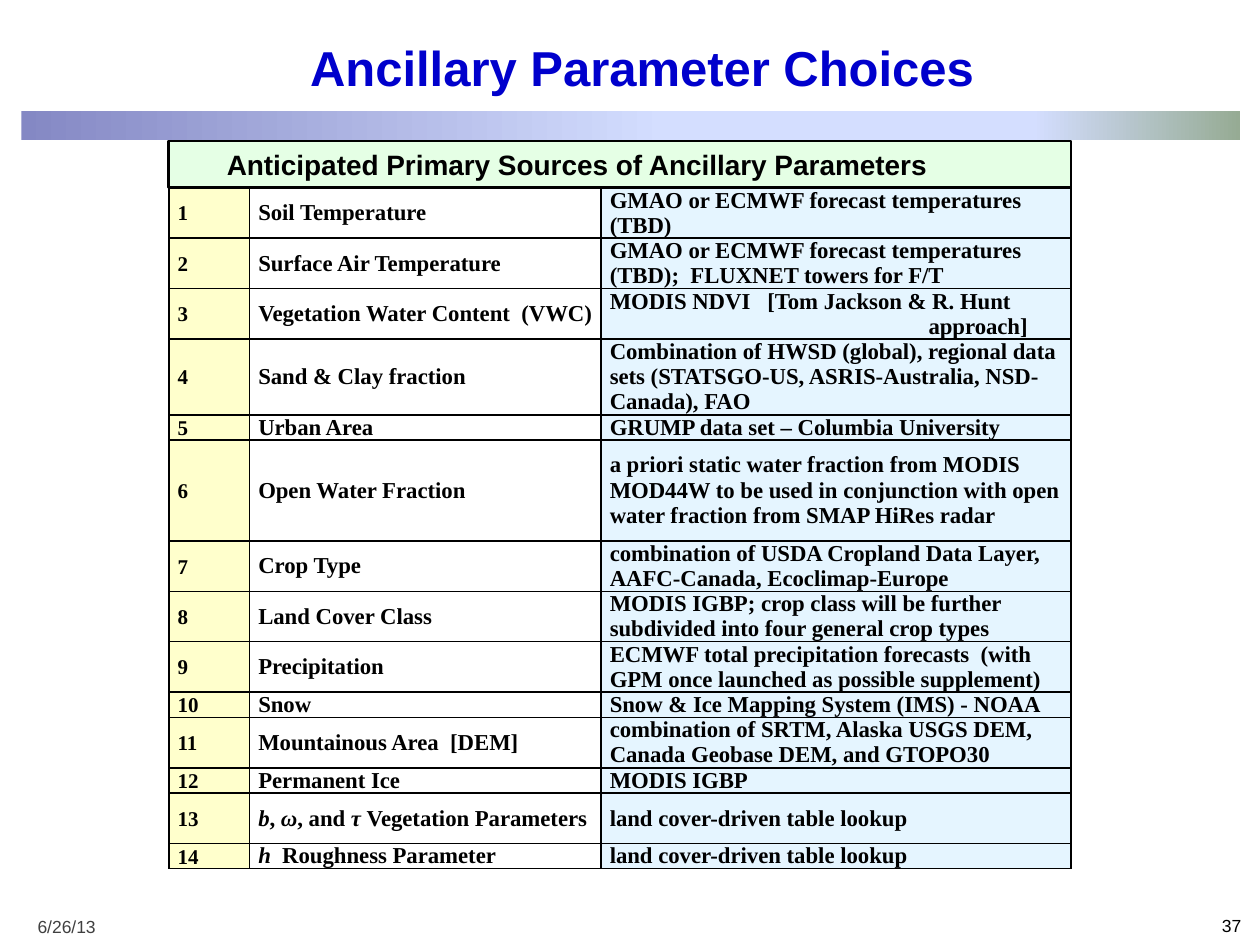
from lxml.etree import SubElement
from pptx import Presentation
from pptx.dml.color import RGBColor
from pptx.enum.shapes import MSO_SHAPE
from pptx.enum.text import MSO_ANCHOR, PP_ALIGN
from pptx.oxml.ns import qn
from pptx.util import Inches, Pt

LEFT, WIDTH = 1.34, 7.16
COLUMN_WIDTHS = [0.64, 2.79, 3.73]
COLUMN_FILLS = [("FFFFCC", 100), None, ("CCECFF", 50)]
COLUMN_SIZES = [12, 13, 13]
LINE_HEIGHT = 0.2
SOURCES = [
    (2, "Soil Temperature", "GMAO or ECMWF forecast temperatures (TBD)"),
    (2, "Surface Air Temperature",
     "GMAO or ECMWF forecast temperatures (TBD);  FLUXNET towers for F/T"),
    (2, "Vegetation Water Content  (VWC)",
     "MODIS NDVI\t[Tom Jackson & R. Hunt\napproach]"),
    (3, "Sand & Clay fraction",
     "Combination of HWSD (global), regional data sets "
     "(STATSGO-US, ASRIS-Australia, NSD-Canada), FAO"),
    (1, "Urban Area", "GRUMP data set – Columbia University"),
    (4, "Open Water Fraction",
     "a priori static water fraction from MODIS MOD44W to be used in "
     "conjunction with open water fraction from SMAP HiRes radar"),
    (2, "Crop Type",
     "combination of USDA Cropland Data Layer, AAFC-Canada, Ecoclimap-Europe"),
    (2, "Land Cover Class",
     "MODIS IGBP; crop class will be further subdivided into four general crop types"),
    (2, "Precipitation",
     "ECMWF total precipitation forecasts  (with GPM once launched as possible supplement)"),
    (1, "Snow", "Snow & Ice Mapping System (IMS) - NOAA"),
    (2, "Mountainous Area  [DEM]",
     "combination of SRTM, Alaska USGS DEM, Canada Geobase DEM, and GTOPO30"),
    (1, "Permanent Ice", "MODIS IGBP"),
    (2, "*b*, *ω*, and *τ* Vegetation Parameters", "land cover-driven table lookup"),
    (1, "*h * Roughness Parameter", "land cover-driven table lookup"),
]


def color(value):
    return RGBColor.from_string(value)


class SlideBuilder:
    heading_font = "Arial"
    table_font = "Times New Roman"
    ink = "000000"

    def __init__(self, deck):
        self.slide = deck.slides.add_slide(deck.slide_layouts[5])

    def style(self, para, size, font=heading_font, hue=ink, bold=False):
        for span in para.runs:
            span.font.name = font
            span.font.size = Pt(size)
            span.font.bold = bold
            span.font.color.rgb = color(hue)

    def solid(self, fill, element, hue, opacity):
        fill.solid()
        fill.fore_color.rgb = color(hue)
        if opacity < 100:
            tint = element.find(qn("a:solidFill")).find(qn("a:srgbClr"))
            SubElement(tint, qn("a:alpha"), val=str(opacity * 1000))

    def title(self, text, left, top, width, height):
        box = self.slide.shapes.title
        box.left, box.top = Inches(left), Inches(top)
        box.width, box.height = Inches(width), Inches(height)
        frame = box.text_frame
        frame.text = text
        frame.vertical_anchor = MSO_ANCHOR.TOP
        frame.paragraphs[0].alignment = PP_ALIGN.CENTER
        self.style(frame.paragraphs[0], 28, hue="0000CC", bold=True)

    def text(self, text, left, top, width, height, hue=ink, align=PP_ALIGN.LEFT):
        box = self.slide.shapes.add_textbox(
            Inches(left), Inches(top), Inches(width), Inches(height))
        para = box.text_frame.paragraphs[0]
        para.text = text
        para.alignment = align
        box.text_frame.word_wrap = align != PP_ALIGN.LEFT
        self.style(para, 10, hue=hue)

    def rectangle(self, left, top, width, height):
        shape = self.slide.shapes.add_shape(
            MSO_SHAPE.RECTANGLE, Inches(left), Inches(top), Inches(width), Inches(height))
        shape.shadow.inherit = False
        return shape

    def gradient_band(self, stops, left, top, width, height):
        band = self.rectangle(left, top, width, height)
        band.line.fill.background()
        band.fill.gradient()
        band.fill.gradient_angle = 0
        stop_list = next(band.element.iter(qn("a:gsLst")))
        for stop in list(stop_list):
            stop_list.remove(stop)
        for position, hue in stops:
            stop = SubElement(stop_list, qn("a:gs"), pos=str(position * 1000))
            SubElement(stop, qn("a:srgbClr"), val=hue)

    def banner(self, text, left, top, width, height):
        box = self.rectangle(left, top, width, height)
        self.solid(box.fill, box.element.spPr, "CCFFCC", 50)
        box.line.color.rgb = color(self.ink)
        box.line.width = Pt(1.5)
        box.text_frame.margin_left = Inches(0.46)
        para = box.text_frame.paragraphs[0]
        para.text = text
        para.alignment = PP_ALIGN.LEFT
        self.style(para, 16, bold=True)

    def cell(self, cell, text, size, fill):
        cell.margin_left = cell.margin_right = Inches(0.07)
        cell.margin_top = cell.margin_bottom = 0
        cell.vertical_anchor = MSO_ANCHOR.MIDDLE
        properties = cell._tc.get_or_add_tcPr()
        for side in ("lnL", "lnR", "lnT", "lnB"):
            border = SubElement(properties, qn(f"a:{side}"), w=str(Pt(1)))
            SubElement(SubElement(border, qn("a:solidFill")), qn("a:srgbClr"), val=self.ink)
        if fill:
            self.solid(cell.fill, properties, *fill)
        else:
            cell.fill.background()
        for index, line in enumerate(text.split("\n")):
            frame = cell.text_frame
            para = frame.add_paragraph() if index else frame.paragraphs[0]
            settings = para._p.get_or_add_pPr()
            if index:
                settings.set("marL", str(Inches(2.53)))
                settings.set("indent", "0")
            if "\t" in line:
                tabs = SubElement(settings, qn("a:tabLst"))
                SubElement(tabs, qn("a:tab"), pos=str(Inches(1.25)), algn="l")
            para.line_spacing = Pt(14.4)
            for part_index, part in enumerate(line.split("*")):
                if part:
                    span = para.add_run()
                    span.text = part
                    span.font.italic = part_index % 2 == 1
            self.style(para, size, font=self.table_font, bold=True)

    def table(self, sources, left, top, width):
        height = sum(lines for lines, _, _ in sources) * LINE_HEIGHT
        table = self.slide.shapes.add_table(
            len(sources), len(COLUMN_WIDTHS),
            Inches(left), Inches(top), Inches(width), Inches(height)).table
        table.first_row = table.horz_banding = False
        for column, column_width in zip(table.columns, COLUMN_WIDTHS):
            column.width = Inches(column_width)
        for number, (lines, parameter, source) in enumerate(sources, 1):
            row = table.rows[number - 1]
            row.height = Inches(lines * LINE_HEIGHT)
            texts = (str(number), parameter, source)
            for cell, text, size, fill in zip(row.cells, texts, COLUMN_SIZES, COLUMN_FILLS):
                self.cell(cell, text, size, fill)


def main():
    deck = Presentation()
    deck.slide_width, deck.slide_height = Inches(10), Inches(7.5)
    page = SlideBuilder(deck)
    page.gradient_band(
        [(0, "8488C4"), (53, "D4DEFF"), (83, "D4DEFF"), (100, "96AB94")],
        0.17, 0.88, 9.67, 0.23)
    page.text("37", 7.87, 7.21, 2.08, 0.25, align=PP_ALIGN.RIGHT)
    page.text("6/26/13", 0.2, 7.22, 0.66, 0.27, hue="404040")
    page.title("Ancillary Parameter Choices", 2.18, 0.25, 5.83, 0.65)
    page.table(SOURCES, LEFT, 1.49, WIDTH)
    page.banner("Anticipated Primary Sources of Ancillary Parameters", LEFT, 1.12, WIDTH, 0.37)
    deck.save("out.pptx")


if __name__ == "__main__":
    main()
